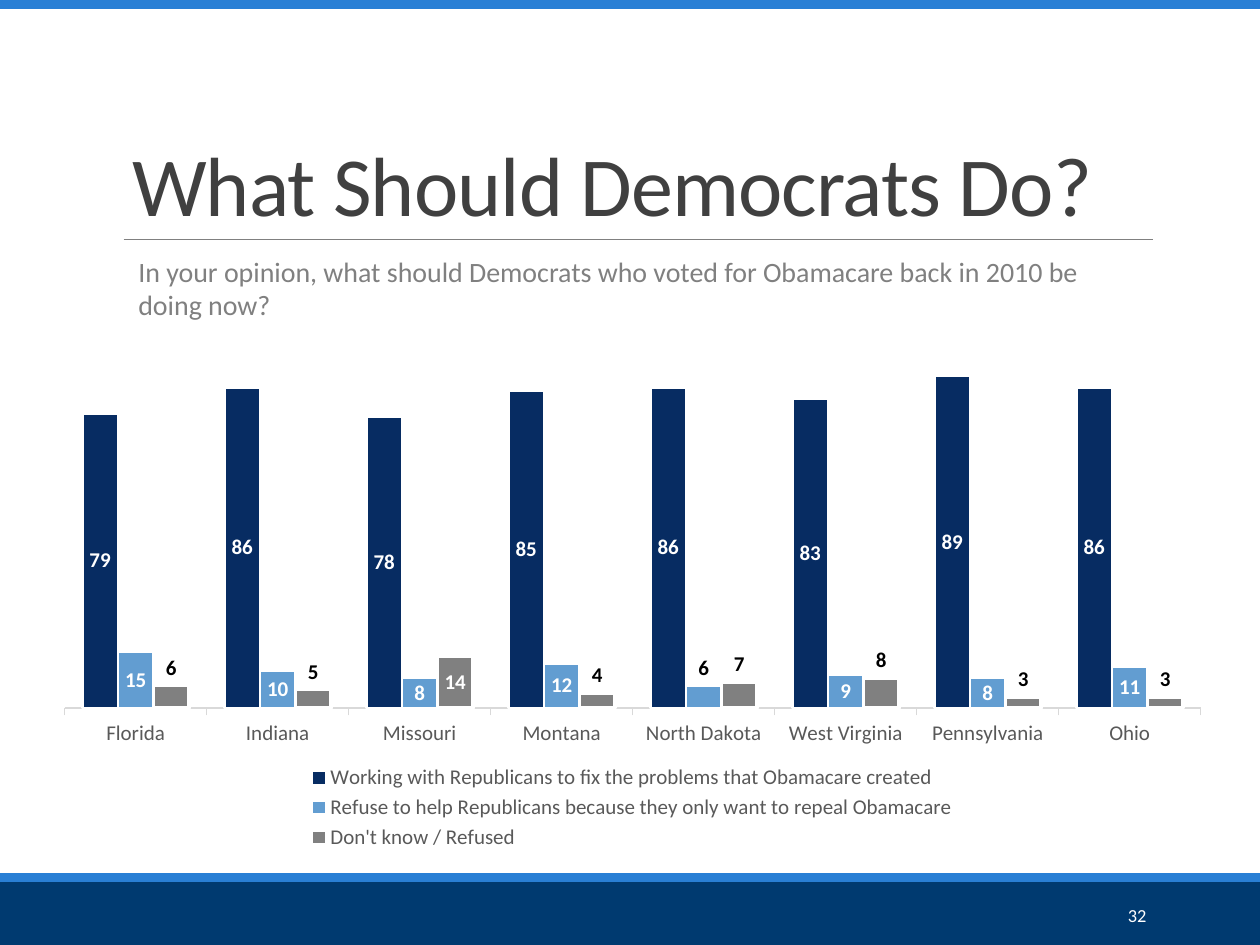
from lxml import etree
from pptx import Presentation
from pptx.chart.data import CategoryChartData
from pptx.dml.color import RGBColor
from pptx.enum.chart import XL_CHART_TYPE as ChartType
from pptx.enum.chart import XL_LABEL_POSITION as LabelPos
from pptx.enum.chart import XL_LEGEND_POSITION as LegendPos
from pptx.enum.chart import XL_TICK_LABEL_POSITION as TickLabelPos
from pptx.enum.chart import XL_TICK_MARK as TickMark
from pptx.enum.shapes import MSO_CONNECTOR as Connector
from pptx.enum.shapes import MSO_SHAPE as Shape
from pptx.enum.text import MSO_ANCHOR as Anchor
from pptx.enum.text import MSO_AUTO_SIZE as AutoSize
from pptx.enum.text import PP_ALIGN as Align
from pptx.oxml import parse_xml
from pptx.oxml.ns import nsdecls, qn
from pptx.util import Cm, Pt

FONT = "Calibri"
WHITE = RGBColor(0xFF, 0xFF, 0xFF)
BLACK = RGBColor(0x00, 0x00, 0x00)
NAVY = RGBColor(0x00, 0x3A, 0x70)
BLUE = RGBColor(0x29, 0x7F, 0xD5)
GRAY = RGBColor(0x80, 0x80, 0x80)
TITLE_GRAY = RGBColor(0x40, 0x40, 0x40)
LABEL_GRAY = RGBColor(0x59, 0x59, 0x59)
AXIS_GRAY = RGBColor(0xD9, 0xD9, 0xD9)
DARK_BAR = RGBColor(0x07, 0x2C, 0x62)
LIGHT_BAR = RGBColor(0x62, 0x9D, 0xD1)

STATES = ["Florida", "Indiana", "Missouri", "Montana", "North Dakota",
          "West Virginia", "Pennsylvania", "Ohio"]
CENTER = (LabelPos.CENTER, WHITE)
ABOVE = (LabelPos.OUTSIDE_END, BLACK)
ANSWERS = [
    ("Working with Republicans to fix the problems that Obamacare created",
     [79, 86, 78, 85, 86, 83, 89, 86], DARK_BAR, 1.5, "0", CENTER, {}),
    ("Refuse to help Republicans because they only want to repeal Obamacare",
     [15, 10, 8, 12, 6, 9, 8, 11], LIGHT_BAR, 1.5, "#,##0", CENTER, {4: ABOVE}),
    ("Don't know / Refused",
     [6, 5, 14, 4, 7, 8, 3, 3], GRAY, 2, "#,##0", ABOVE, {2: CENTER}),
]


def style_font(font, size, color, bold=False):
    font.name = FONT
    font.size = Pt(size)
    font.bold = bold
    font.color.rgb = color


def add_bar(slide, left, top, width, height, color):
    sp = slide.shapes.add_shape(Shape.RECTANGLE, left, top, width, height)
    sp.shadow.inherit = False
    sp.fill.solid()
    sp.fill.fore_color.rgb = color
    sp.line.fill.background()


def add_frame(slide, left, top, width, height):
    band, strip = Cm(1.27), Cm(0.18)
    bottom = top + height
    add_bar(slide, left, bottom - band, width, band, NAVY)
    add_bar(slide, left, bottom - band - strip, width, strip, BLUE)
    add_bar(slide, left, top, width, strip, BLUE)


def add_title(slide, left, top, width, height):
    bottom = top + height
    rule = slide.shapes.add_connector(
        Connector.STRAIGHT, left + Cm(0.08), bottom, left + width, bottom)
    rule.line.color.rgb = GRAY
    rule.line.width = Pt(0.5)
    etree.SubElement(rule._element.spPr, qn("a:effectLst"))

    title = slide.shapes.title
    title.left, title.top, title.width, title.height = left, top, width, height
    tf = title.text_frame
    tf.text = "What Should Democrats Do?"
    tf.auto_size = AutoSize.NONE
    tf.vertical_anchor = Anchor.BOTTOM
    p = tf.paragraphs[0]
    p.alignment = Align.LEFT
    p.line_spacing = 0.85
    r = p.runs[0]
    style_font(r.font, 48, TITLE_GRAY)
    r.font._element.set("spc", "-50")


def add_text(slide, left, top, width, height, text, size, color,
             align=Align.LEFT, anchor=Anchor.TOP):
    tf = slide.shapes.add_textbox(left, top, width, height).text_frame
    tf.word_wrap = True
    tf.vertical_anchor = anchor
    tf.text = text
    p = tf.paragraphs[0]
    p.alignment = align
    style_font(p.runs[0].font, size, color)


def format_labels(labels, look):
    position, color = look
    style_font(labels.font, 12, color, bold=True)
    labels.position = position


def format_series(series, answer):
    _, _, color, outline, number_format, look, exceptions = answer
    series.invert_if_negative = False
    series.format.fill.solid()
    series.format.fill.fore_color.rgb = color
    series.format.line.color.rgb = WHITE
    series.format.line.width = Pt(outline)
    labels = series.data_labels
    labels.show_value = True
    labels.number_format = number_format
    labels.number_format_is_linked = False
    format_labels(labels, look)
    for index, point_look in exceptions.items():
        format_labels(series.points[index].data_label, point_look)


def format_axes(chart):
    axis = chart.category_axis
    axis.major_tick_mark = TickMark.OUTSIDE
    axis.tick_label_position = TickLabelPos.LOW
    axis.format.line.color.rgb = AXIS_GRAY
    axis.format.line.width = Pt(0.75)
    style_font(axis.tick_labels.font, 12, LABEL_GRAY)
    axis = chart.value_axis
    axis.minimum_scale, axis.maximum_scale = 0, 100
    axis.has_major_gridlines = False
    axis.visible = False


def set_plot_area(chart, x, y, w, h):
    area = chart._chartSpace.chart.plotArea
    for old in area.findall(qn("c:layout")):
        area.remove(old)
    area.insert(0, parse_xml(
        f'<c:layout {nsdecls("c")}><c:manualLayout><c:layoutTarget val="inner"/>'
        '<c:xMode val="edge"/><c:yMode val="edge"/>'
        f'<c:x val="{x}"/><c:y val="{y}"/><c:w val="{w}"/><c:h val="{h}"/>'
        '</c:manualLayout></c:layout>'))


def add_poll_chart(slide, left, top, width, height):
    data = CategoryChartData(number_format="0")
    data.categories = STATES
    for name, values, *_ in ANSWERS:
        data.add_series(name, values)
    chart = slide.shapes.add_chart(
        ChartType.COLUMN_CLUSTERED, left, top, width, height, data).chart
    style_font(chart.font, 10, BLACK)
    chart.has_title = False
    chart.has_legend = True
    chart.legend.position = LegendPos.BOTTOM
    chart.legend.include_in_layout = False
    style_font(chart.legend.font, 12, LABEL_GRAY)
    plot = chart.plots[0]
    plot.vary_by_categories = False
    plot.gap_width = 100
    plot.overlap = 0
    for series, answer in zip(plot.series, ANSWERS):
        format_series(series, answer)
    format_axes(chart)
    set_plot_area(chart, 0.01, 0.01, 0.98, 0.71)


def main():
    prs = Presentation()
    prs.slide_width, prs.slide_height = Cm(25.4), Cm(19.05)
    slide = prs.slides.add_slide(prs.slide_layouts[5])
    add_frame(slide, 0, 0, prs.slide_width, prs.slide_height)
    add_title(slide, Cm(2.41), Cm(0.79), Cm(20.83), Cm(4.04))
    add_text(slide, Cm(20.62), Cm(17.93), Cm(2.74), Cm(1.02),
             "32", 10.5, WHITE, Align.RIGHT, Anchor.MIDDLE)
    add_text(slide, Cm(2.54), Cm(5), Cm(20.83), Cm(1.63),
             "In your opinion, what should Democrats who voted for Obamacare "
             "back in 2010 be doing now?", 16, GRAY)
    add_poll_chart(slide, Cm(1.07), Cm(6.65), Cm(23.37), Cm(10.59))
    prs.save("out.pptx")


if __name__ == "__main__":
    main()
